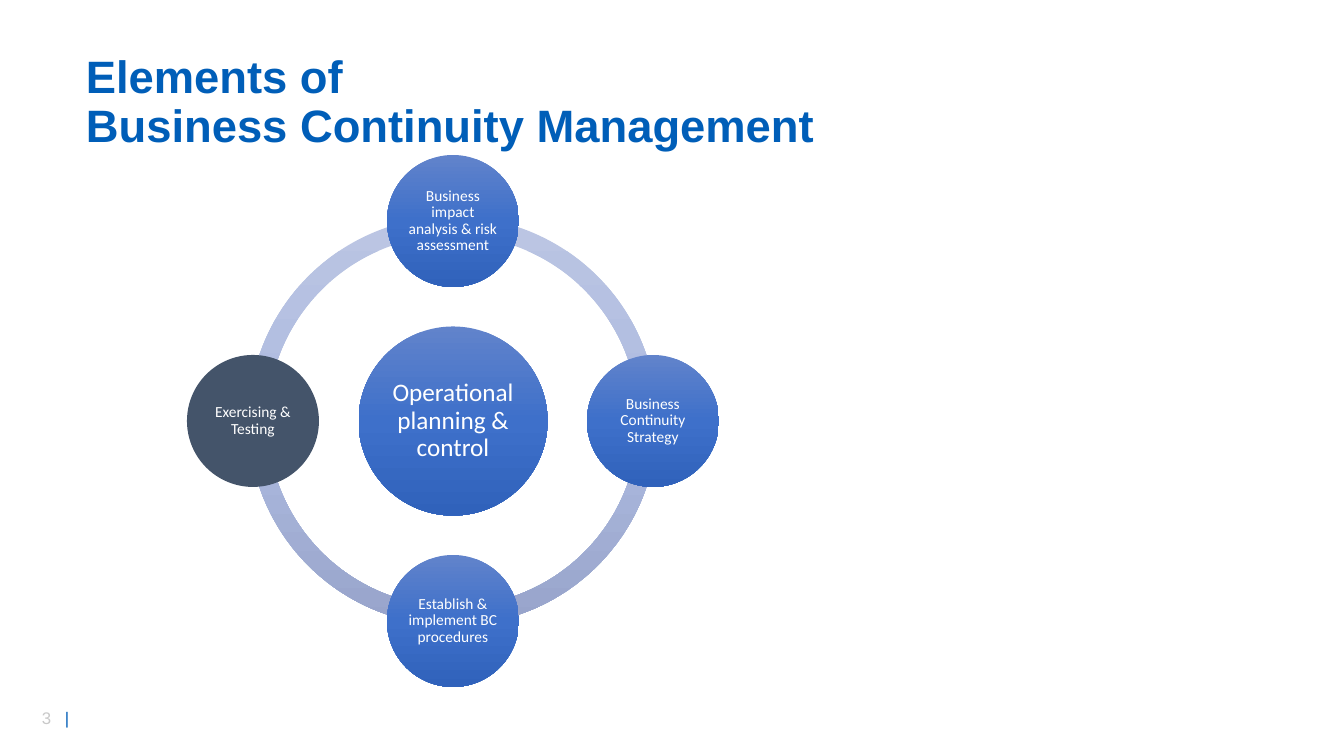
import copy
import pptx
import pptx.util
import pptx.dml.color
import pptx.enum.shapes
import pptx.enum.text
import pptx.oxml.ns
from lxml import etree

# Content: name, direction from the hub (x, y), fill
TITLE = "Elements of\vBusiness Continuity Management"
PAGE_NUMBER = "3"
HUB = "Operational planning & control"
ELEMENTS = [
    ("Business impact analysis & risk assessment", (0, -1), "blue"),
    ("Business Continuity Strategy", (1, 0), "blue"),
    ("Establish & implement BC procedures", (0, 1), "blue"),
    ("Exercising & Testing", (-1, 0), "slate"),
]

COLORS = {"title": "005EB8", "number": "C9C9C9", "slate": "44546A", "white": "FFFFFF"}
GRADIENTS = {
    "ring": ("BBC5E3", "AEBBE0", "98A4CB"),
    "blue": ("6183CB", "3E70CA", "3062BB"),
}

# Measures in px
CENTER_X, CENTER_Y = 453, 421
RING_SIZE, HUB_SIZE, CIRCLE_SIZE, ORBIT = 409, 189, 132, 200
BAR_TAB = 23
EMU_PER_PX = 914400 / 100.8

SHAPES = pptx.enum.shapes.MSO_SHAPE
MIDDLE = pptx.enum.text.MSO_ANCHOR.MIDDLE
CENTERED = pptx.enum.text.PP_ALIGN.CENTER


def px(length):
    return pptx.util.Emu(round(length * EMU_PER_PX))


def rgb(name):
    return pptx.dml.color.RGBColor.from_string(COLORS.get(name, name))


def style(span, font, size, color, bold=False):
    span.font.name = font
    span.font.size = pptx.util.Pt(size)
    span.font.color.rgb = rgb(color)
    span.font.bold = bold


def paint(shape, fill_name):
    shape.shadow.inherit = False
    shape.line.fill.background()
    if fill_name not in GRADIENTS:
        shape.fill.solid()
        shape.fill.fore_color.rgb = rgb(fill_name)
        return
    shape.fill.gradient()
    shape.fill.gradient_angle = 270
    stop_list = shape._element.spPr.find(".//" + pptx.oxml.ns.qn("a:gsLst"))
    stop_list.insert(1, copy.deepcopy(stop_list[0]))
    for index, stop in enumerate(shape.fill.gradient_stops):
        stop.position = index / 2
        stop.color.rgb = rgb(GRADIENTS[fill_name][index])


def add_centered(page, kind, center_x, center_y, size, fill_name):
    shape = page.shapes.add_shape(
        kind, px(center_x - size / 2), px(center_y - size / 2), px(size), px(size))
    paint(shape, fill_name)
    return shape


def add_circle(page, words, center_x, center_y, size, fill_name, font_size, inset):
    circle = add_centered(page, SHAPES.OVAL, center_x, center_y, size, fill_name)
    frame = circle.text_frame
    frame.margin_left = frame.margin_right = px(inset)
    frame.margin_top = frame.margin_bottom = px(inset)
    frame.word_wrap = True
    frame.vertical_anchor = MIDDLE
    frame.text = words
    para = frame.paragraphs[0]
    para.alignment = CENTERED
    para.line_spacing = 0.9
    style(para.runs[0], "Calibri", font_size, "white")


def add_text(page, left, top, width, height):
    box = page.shapes.add_textbox(px(left), px(top), px(width), px(height))
    box.text_frame.word_wrap = True
    return box.text_frame


def main():
    deck = pptx.Presentation()
    deck.slide_width, deck.slide_height = px(1344), px(756)
    page = deck.slides.add_slide(deck.slide_layouts[6])

    # Page number, with a bar at a tab stop
    frame = add_text(page, 32, 703, 72, 30)
    para = frame.paragraphs[0]
    tabs = etree.SubElement(para._p.get_or_add_pPr(), pptx.oxml.ns.qn("a:tabLst"))
    etree.SubElement(tabs, pptx.oxml.ns.qn("a:tab"), pos=str(px(BAR_TAB)), algn="l")
    for words, color in ((PAGE_NUMBER + "\t", "number"), ("|", "title")):
        span = para.add_run()
        span.text = words
        style(span, "Arial", 12, color)

    # Title
    frame = add_text(page, 76, 69, 1173, 68)
    frame.vertical_anchor = MIDDLE
    frame.text = TITLE
    para = frame.paragraphs[0]
    para.line_spacing = 0.9
    for span in para.runs:
        style(span, "Arial", 32.4, "title", bold=True)

    # Ring of four quarter arcs; an adjustment of 54 is 90 degrees
    for start in (108, 54, 0, 162):
        arc = add_centered(page, SHAPES.BLOCK_ARC, CENTER_X, CENTER_Y, RING_SIZE, "ring")
        arc.adjustments[0] = start
        arc.adjustments[1] = (start + 54) % 216
        arc.adjustments[2] = 0.046

    # Hub and the elements around it
    add_circle(page, HUB, CENTER_X, CENTER_Y, HUB_SIZE, "blue", 18, 3)
    for words, (across, down), fill_name in ELEMENTS:
        add_circle(page, words, CENTER_X + across * ORBIT, CENTER_Y + down * ORBIT,
                   CIRCLE_SIZE, fill_name, 11, 2)

    deck.save("out.pptx")


if __name__ == "__main__":
    main()
